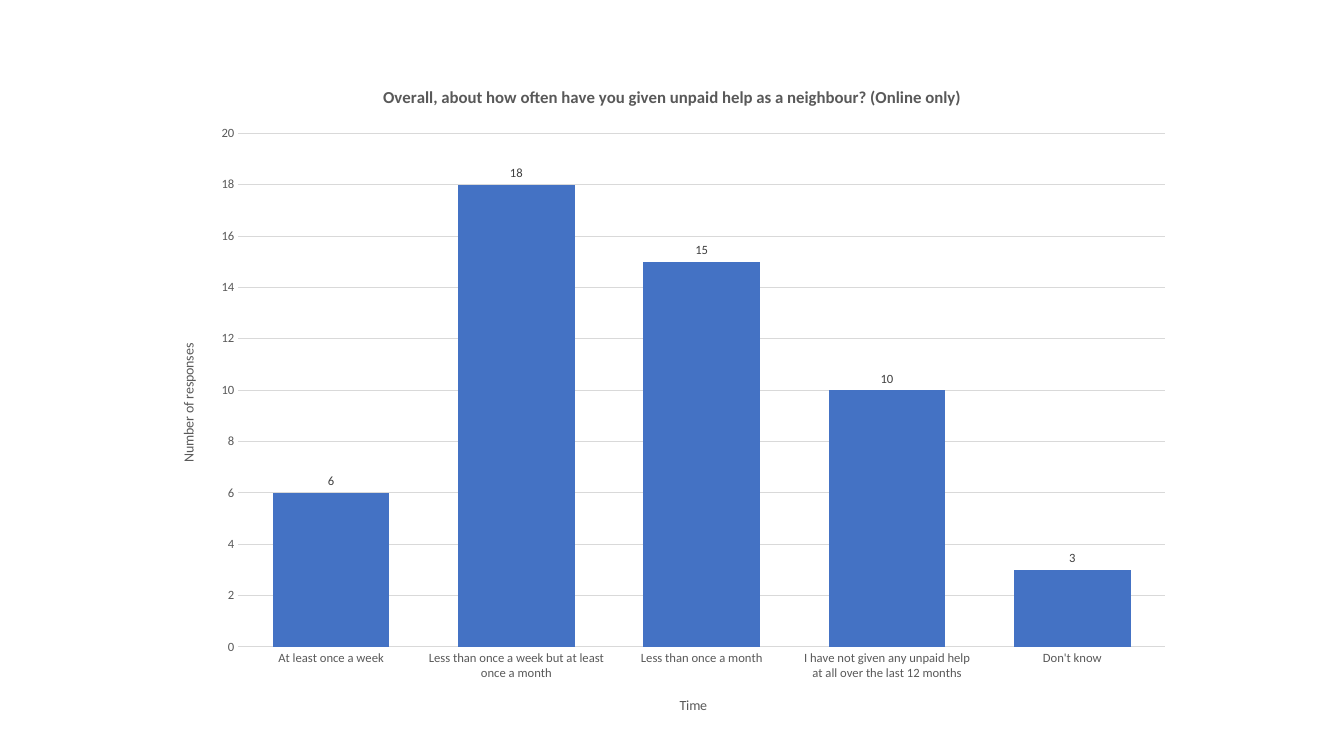
from typing import NamedTuple

from lxml import etree
from pptx import Presentation
from pptx import util as u
from pptx.chart.data import CategoryChartData
from pptx.dml.color import RGBColor
from pptx.enum import chart as ch
from pptx.oxml.ns import qn

FONT = "Calibri"
GREY, DARK_GREY, GRID, BLUE = "595959", "404040", "D9D9D9", "4472C4"
QUESTION = "Overall, about how often have you given unpaid help as a neighbour? (Online only)"


class Answer(NamedTuple):
    frequency: str
    responses: int


ANSWERS = [
    Answer("At least once a week", 6),
    Answer("Less than once a week but at least once a month", 18),
    Answer("Less than once a month", 15),
    Answer("I have not given any unpaid help at all over the last 12 months", 10),
    Answer("Don't know", 3),
]


def rgb(code: str) -> RGBColor:
    return RGBColor.from_string(code)


def style_font(font, size: float, color: str = GREY, bold: bool = False) -> None:
    font.name, font.size, font.bold = FONT, u.Pt(size), bold
    font.color.rgb = rgb(color)


def write_title(owner, wording: str, size: float, bold: bool = False) -> None:
    """Give a chart or an axis its title."""
    paragraph = owner.text_frame.paragraphs[0]
    paragraph.text = wording
    style_font(paragraph.runs[0].font, size, bold=bold)


def style_axis(axis, title: str) -> None:
    axis.major_tick_mark = axis.minor_tick_mark = ch.XL_TICK_MARK.NONE
    style_font(axis.tick_labels.font, 9)
    write_title(axis.axis_title, title, 10)


def style_line(line) -> None:
    line.color.rgb = rgb(GRID)
    line.width = u.Pt(0.75)


def place_plot(chart, **fractions: float) -> None:
    """Fix the inner plot area as fractions of the chart."""
    plot_area = chart._chartSpace.chart.plotArea
    for layout in plot_area.findall(qn("c:layout")):
        plot_area.remove(layout)
    layout = etree.Element(qn("c:layout"))
    plot_area.insert(0, layout)
    manual = etree.SubElement(layout, qn("c:manualLayout"))
    settings = {"layoutTarget": "inner", "xMode": "edge", "yMode": "edge", **fractions}
    for tag, value in settings.items():
        etree.SubElement(manual, qn(f"c:{tag}")).set("val", str(value))


def add_responses_chart(slide) -> None:
    data = CategoryChartData()
    data.categories = [answer.frequency for answer in ANSWERS]
    data.add_series("Series 1", [answer.responses for answer in ANSWERS])
    chart = slide.shapes.add_chart(
        ch.XL_CHART_TYPE.COLUMN_CLUSTERED,
        u.Pt(113.8), u.Pt(45.4), u.Pt(733), u.Pt(479.5), data,
    ).chart
    style_font(chart.font, 10, "000000")
    chart.has_legend = False
    write_title(chart.chart_title, QUESTION, 12, bold=True)
    chart.chart_title.include_in_layout = False
    place_plot(chart, x=0.077, y=0.104, w=0.903, h=0.765)

    style_axis(chart.category_axis, "Time")
    style_line(chart.category_axis.format.line)

    counts = chart.value_axis
    style_axis(counts, "Number of responses")
    counts.minimum_scale, counts.maximum_scale, counts.major_unit = 0, 20, 2
    counts.format.line.fill.background()
    style_line(counts.major_gridlines.format.line)

    columns = chart.plots[0]
    columns.gap_width = 59
    columns.vary_by_categories = False
    responses = columns.series[0]
    responses.format.fill.solid()
    responses.format.fill.fore_color.rgb = rgb(BLUE)
    labels = responses.data_labels
    labels.show_value = True
    labels.position = ch.XL_LABEL_POSITION.OUTSIDE_END
    style_font(labels.font, 9, DARK_GREY)


def main() -> None:
    deck = Presentation()
    deck.slide_width, deck.slide_height = u.Pt(960), u.Pt(540)
    add_responses_chart(deck.slides.add_slide(deck.slide_layouts[6]))
    deck.save("out.pptx")


if __name__ == "__main__":
    main()
